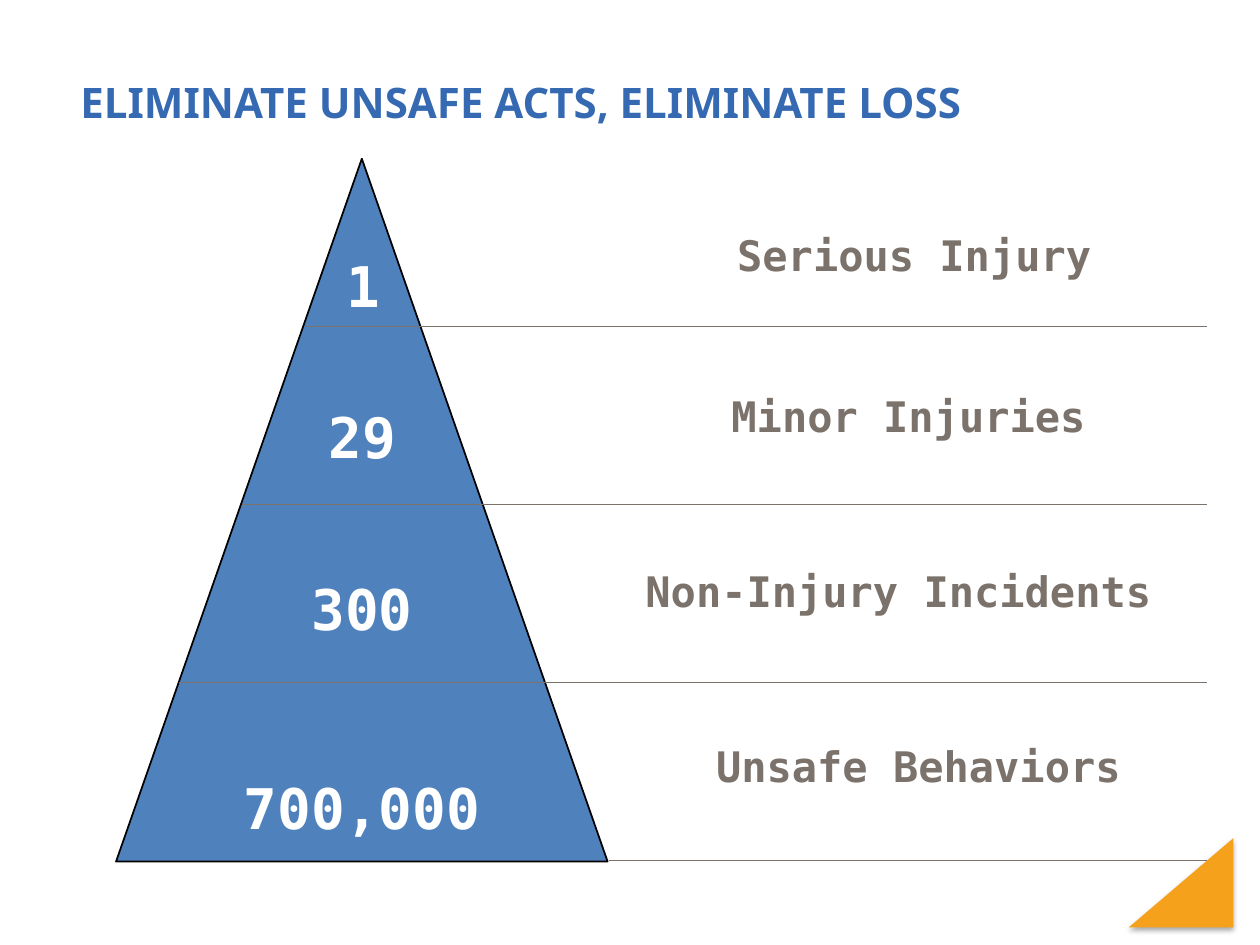
"""Build the safety pyramid slide."""
from dataclasses import dataclass

from lxml import etree
from pptx import Presentation
from pptx.dml.color import RGBColor
from pptx.enum.shapes import MSO_CONNECTOR, MSO_SHAPE
from pptx.enum.text import MSO_ANCHOR, PP_ALIGN
from pptx.oxml import parse_xml
from pptx.oxml.ns import nsdecls, qn
from pptx.util import Cm, Pt

STRAIGHT = MSO_CONNECTOR.STRAIGHT
PYRAMID, CORNER = MSO_SHAPE.ISOSCELES_TRIANGLE, MSO_SHAPE.RIGHT_TRIANGLE
MIDDLE, TOP = MSO_ANCHOR.MIDDLE, MSO_ANCHOR.TOP
CENTER, LEFT = PP_ALIGN.CENTER, PP_ALIGN.LEFT

COLORS = {
    "title": "3569B2",
    "pyramid": "4F81BD",
    "outline": "000000",
    "corner": "F6A11C",
    "number": "FFFFFF",
    "label": "7B726B",
}
TITLE_FORMAT = {"name": "Noto Sans", "size": Pt(24), "bold": True}
NUMBER_FORMAT = {"name": "DejaVu Sans Mono", "size": Pt(32), "bold": True}
LABEL_FORMAT = {"name": "DejaVu Sans Mono", "size": Pt(24), "bold": True}

PYRAMID_CENTER = 7.3
RULE_TOP, RULE_STEP, RULE_RIGHT = 6.58, 3.59, 24.33
NUMBER_HEIGHT, LABEL_HEIGHT = 1.63, 1.27


@dataclass(frozen=True)
class Frame:
    """Position and size in centimetres."""

    left: float
    top: float
    width: float
    height: float

    def lengths(self) -> tuple:
        """Return the four values as lengths."""
        return Cm(self.left), Cm(self.top), Cm(self.width), Cm(self.height)


@dataclass(frozen=True)
class Level:
    """One level of the pyramid, with its label and its rule."""

    number: str
    number_top: float
    number_width: float
    label: str
    label_left: float
    label_top: float
    label_width: float
    rule_left: float


LEVELS = (
    Level("1", 4.95, 1.14, "Serious Injury", 12.5, 4.5, 11.86, 6.15),
    Level("29", 7.98, 2.54, "Minor Injuries", 12.5, 7.75, 11.63, 4.88),
    Level("300", 11.46, 3.81, "Non-Injury Incidents", 11.86, 11.28, 12.5, 3.61),
    Level("700,000", 15.47, 5.92, "Unsafe Behaviors", 12.7, 14.81, 11.63, 12.27),
)


def color(name: str) -> RGBColor:
    """Look up a named colour."""
    return RGBColor.from_string(COLORS[name])


def add_text(page, text: str, frame: Frame, font_format: dict, color_name: str,
             align=CENTER, anchor=TOP) -> None:
    """Add a text box with one formatted paragraph."""
    box = page.shapes.add_textbox(*frame.lengths())
    box.text_frame.word_wrap = True
    box.text_frame.vertical_anchor = anchor
    para = box.text_frame.paragraphs[0]
    para.alignment = align
    span = para.add_run()
    span.text = text
    for attribute, value in font_format.items():
        setattr(span.font, attribute, value)
    span.font.color.rgb = color(color_name)


def add_rule(page, left: float, top: float) -> None:
    """Add a thin horizontal rule that ends at the right margin."""
    rule = page.shapes.add_connector(STRAIGHT, Cm(left), Cm(top), Cm(RULE_RIGHT), Cm(top))
    rule.line.color.rgb = color("label")
    rule.line.width = Pt(0.75)
    etree.SubElement(rule._element.spPr, qn("a:effectLst"))


def add_filled_shape(page, kind, frame: Frame, color_name: str):
    """Add a filled shape without shadow."""
    shape = page.shapes.add_shape(kind, *frame.lengths())
    shape.shadow.inherit = False
    shape.fill.solid()
    shape.fill.fore_color.rgb = color(color_name)
    return shape


def add_corner(page) -> None:
    """Add the corner triangle with its soft shadow."""
    corner = add_filled_shape(page, CORNER, Frame(22.91, 16.74, 1.8, 2.11), "corner")
    corner.rotation = 270
    corner.line.fill.background()
    effects = corner._element.spPr.find(qn("a:effectLst"))
    effects.append(parse_xml(
        f'<a:outerShdw {nsdecls("a")} blurRad="{Pt(3.1)}" dist="{Pt(1.8)}" '
        'dir="5400000" rotWithShape="0"><a:srgbClr val="000000">'
        '<a:alpha val="35000"/></a:srgbClr></a:outerShdw>'
    ))


def add_pyramid(page) -> None:
    """Add the outlined pyramid."""
    pyramid = add_filled_shape(page, PYRAMID, Frame(2.34, 3.2, 9.91, 14.17), "pyramid")
    pyramid.line.color.rgb = color("outline")
    pyramid.line.width = Pt(1)


def add_level(page, index: int, level: Level) -> None:
    """Add the rule, number and label of one level."""
    add_rule(page, level.rule_left, RULE_TOP + index * RULE_STEP)
    number_left = PYRAMID_CENTER - level.number_width / 2
    number_frame = Frame(number_left, level.number_top, level.number_width, NUMBER_HEIGHT)
    label_frame = Frame(level.label_left, level.label_top, level.label_width, LABEL_HEIGHT)
    add_text(page, level.number, number_frame, NUMBER_FORMAT, "number")
    add_text(page, level.label, label_frame, LABEL_FORMAT, "label")


def main() -> None:
    """Build and save the deck."""
    deck = Presentation()
    deck.slide_width, deck.slide_height = Cm(25.4), Cm(19.05)
    page = deck.slides.add_slide(deck.slide_layouts[6])
    add_corner(page)
    add_text(page, "ELIMINATE UNSAFE ACTS, ELIMINATE LOSS",
             Frame(1.37, 0.46, 23.14, 3.18), TITLE_FORMAT, "title", LEFT, MIDDLE)
    add_pyramid(page)
    for index, level in enumerate(LEVELS):
        add_level(page, index, level)
    deck.save("out.pptx")


if __name__ == "__main__":
    main()
